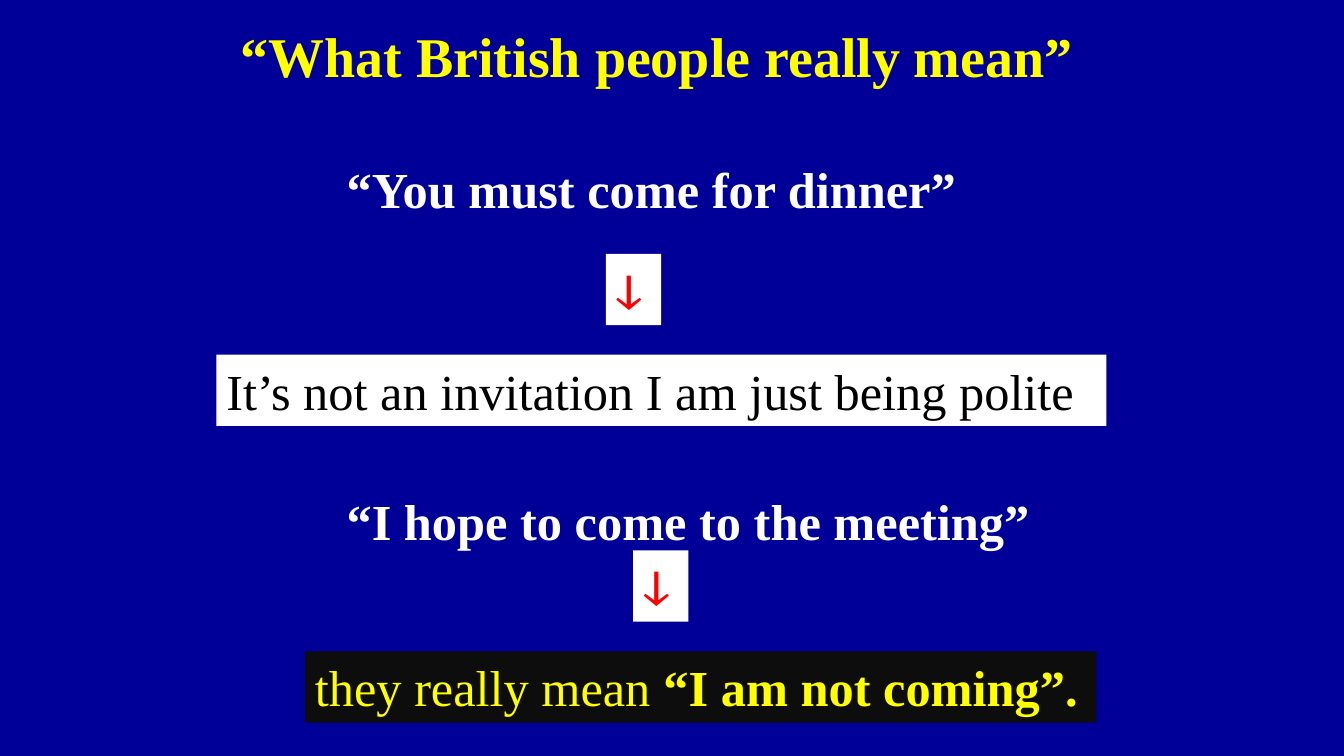
from dataclasses import dataclass

from pptx import Presentation
from pptx.dml.color import RGBColor
from pptx.enum.text import MSO_ANCHOR, MSO_AUTO_SIZE, PP_ALIGN
from pptx.slide import Slide
from pptx.util import Pt

LEFT = PP_ALIGN.LEFT
TOP = MSO_ANCHOR.TOP
FIT_TEXT = MSO_AUTO_SIZE.SHAPE_TO_FIT_TEXT


@dataclass(frozen=True)
class Theme:
    font: str = "Times New Roman"
    background: str = "000099"
    yellow: str = "FFFF00"
    white: str = "FFFFFF"
    red: str = "FF0000"
    black: str = "000000"
    charcoal: str = "0D0D0D"
    title_size: float = 40
    body_size: float = 36


THEME = Theme()


@dataclass(frozen=True)
class Run:
    text: str
    bold: bool = False


@dataclass(frozen=True)
class Label:
    runs: tuple[Run, ...]
    left: float
    top: float
    width: float
    color: str
    fill: str | None = None
    height: float = 50.9
    size: float = THEME.body_size


def quote(text: str, top: float, width: float) -> Label:
    return Label((Run(text, bold=True),), 240.5, top, width, THEME.white)


def arrow(left: float, top: float) -> Label:
    return Label((Run("ↆ"),), left, top, 39.6, THEME.red, THEME.white)


LABELS = (
    # Title
    Label((Run("“What British people really mean”", bold=True),), 164.9, 11.5, 615.6,
          THEME.yellow, height=55.7, size=THEME.title_size),
    # Dinner invitation and its meaning
    quote("“You must come for dinner”", 109.4, 463),
    arrow(432.7, 181.4),
    Label((Run("It’s not an invitation I am just being polite"),), 154.6, 253.4, 635.8,
          THEME.black, THEME.white),
    # Meeting promise and its meaning
    quote("“I hope to come to the meeting”", 346.3, 518.4),
    arrow(452.2, 393.1),
    Label((Run("they really mean "), Run("“I am not coming”.", bold=True)), 217.9, 465.3, 565.2,
          THEME.yellow, THEME.charcoal),
)


def add_text(slide: Slide, runs: tuple[Run, ...], *, left: float, top: float, width: float,
             height: float, size: float, color: str, fill: str | None) -> None:
    shape = slide.shapes.add_textbox(Pt(left), Pt(top), Pt(width), Pt(height))
    if fill:
        shape.fill.solid()
        shape.fill.fore_color.rgb = RGBColor.from_string(fill)
    frame = shape.text_frame
    frame.word_wrap = False
    frame.auto_size = FIT_TEXT
    frame.vertical_anchor = TOP
    paragraph = frame.paragraphs[0]
    paragraph.alignment = LEFT
    for part in runs:
        run = paragraph.add_run()
        run.text = part.text
        run.font.name = THEME.font
        run.font.size = Pt(size)
        run.font.bold = part.bold
        run.font.color.rgb = RGBColor.from_string(color)


def main() -> None:
    presentation = Presentation()
    presentation.slide_width = Pt(960)
    presentation.slide_height = Pt(540)
    slide = presentation.slides.add_slide(presentation.slide_layouts[6])
    slide.background.fill.solid()
    slide.background.fill.fore_color.rgb = RGBColor.from_string(THEME.background)
    for label in LABELS:
        add_text(slide, label.runs, left=label.left, top=label.top, width=label.width,
                 height=label.height, size=label.size, color=label.color, fill=label.fill)
    presentation.save("out.pptx")


if __name__ == "__main__":
    main()
